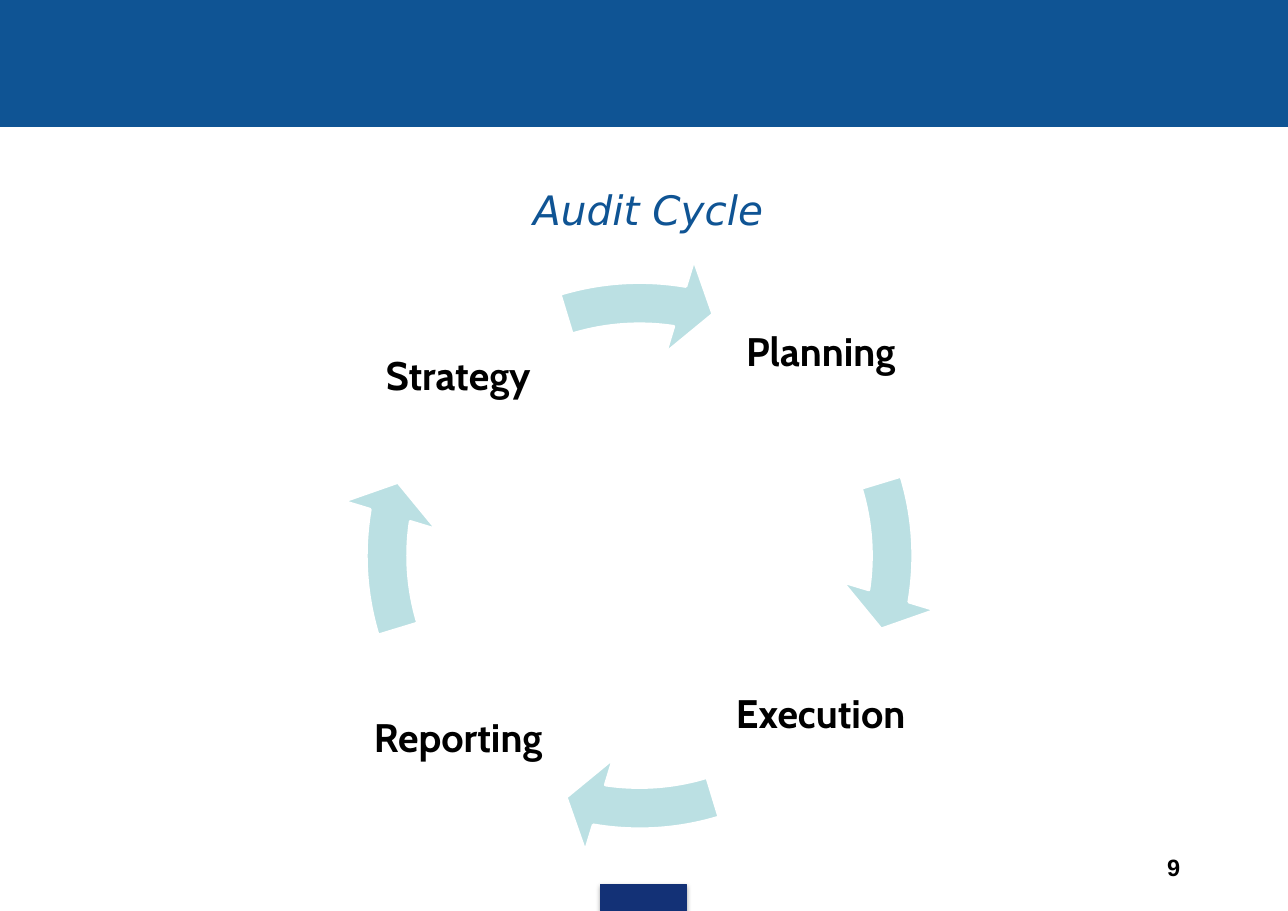
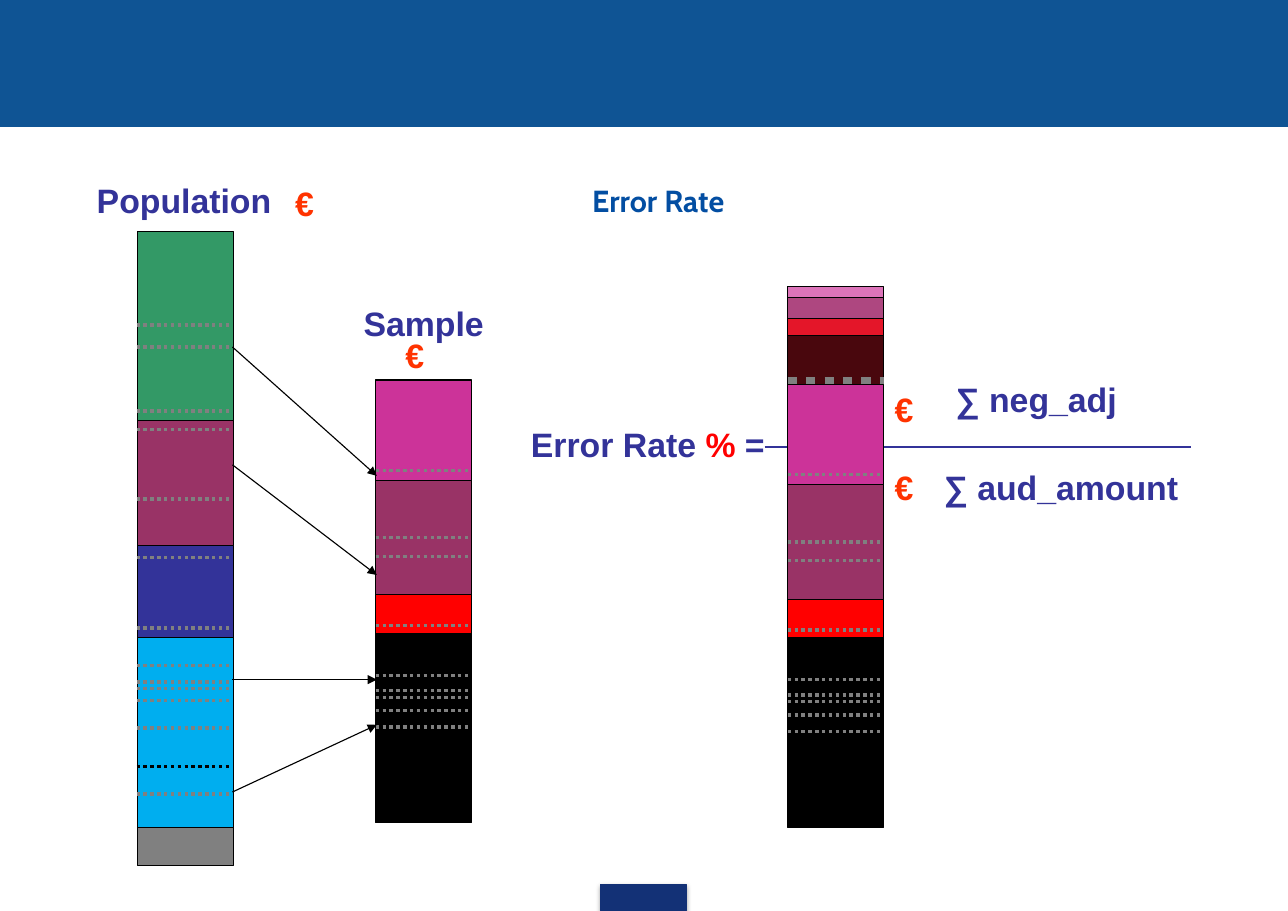
import pptx
import pptx.util
import pptx.dml.color
import pptx.enum.dml
import pptx.enum.shapes
import pptx.enum.text
import pptx.oxml
import pptx.oxml.ns

Inches = pptx.util.Inches
Pt = pptx.util.Pt
qn = pptx.oxml.ns.qn
SHAPE = pptx.enum.shapes.MSO_SHAPE
ANCHOR = pptx.enum.text.MSO_ANCHOR
ALIGN = pptx.enum.text.PP_ALIGN

WIDTH, HEIGHT = 11.69, 8.27
BAR_WIDTH = 0.87
COLORS = {
    "band": "0F5494", "tab": "133176", "title": "034EA2", "arrow": "BBE0E3",
    "white": "FFFFFF", "black": "000000", "gray": "808080", "label": "333399",
    "euro": "FF3300", "red": "FF0000", "pink": "CC3399", "plum": "993366",
    "green": "339966", "cyan": "00AEEF",
}
LABEL = dict(size=22.1, bold=True, color="label", inset=0)


def rgb(name):
    return pptx.dml.color.RGBColor.from_string(COLORS[name])


def drawing_xml(tag, attributes="", inner=""):
    namespace = pptx.oxml.ns.nsdecls("a")
    return pptx.oxml.parse_xml(f"<a:{tag} {namespace} {attributes}>{inner}</a:{tag}>")


# Elements
def add_text(page, at, text, font="Arial", size=20, color="black", bold=False,
             italic=False, align=ALIGN.CENTER, anchor=ANCHOR.MIDDLE, inset=0.05):
    """Add one paragraph; text is a string or a list of (text, colour) spans."""
    box = page.shapes.add_textbox(*map(Inches, at))
    frame = box.text_frame
    frame.word_wrap = True
    frame.vertical_anchor = anchor
    frame.margin_left = frame.margin_right = Inches(inset)
    frame.margin_top = frame.margin_bottom = Inches(inset)
    para = frame.paragraphs[0]
    para.alignment = align
    spans = [(text, color)] if isinstance(text, str) else text
    for words, span_color in spans:
        span = para.add_run()
        span.text = words
        span.font.name, span.font.size = font, Pt(size)
        span.font.bold, span.font.italic = bold, italic
        span.font.color.rgb = rgb(span_color)


def add_block(page, at, fill, line="black", width=0.75, kind=SHAPE.RECTANGLE, opacity=100):
    block = page.shapes.add_shape(kind, *map(Inches, at))
    block.shadow.inherit = False
    block.fill.solid()
    block.fill.fore_color.rgb = rgb(fill)
    if opacity < 100:
        color = block._element.spPr.find(qn("a:solidFill")).find(qn("a:srgbClr"))
        color.append(drawing_xml("alpha", f'val="{opacity * 1000}"'))
    block.line.color.rgb = rgb(line)
    block.line.width = Pt(width)
    return block


def add_line(page, start, end, color="black", width=0.75, dotted=False, arrow=False):
    line = page.shapes.add_connector(
        pptx.enum.shapes.MSO_CONNECTOR.STRAIGHT, *map(Inches, (*start, *end)))
    line.line.color.rgb = rgb(color)
    line.line.width = Pt(width)
    if dotted:
        line.line.dash_style = pptx.enum.dml.MSO_LINE.ROUND_DOT
    properties = line._element.spPr
    if arrow:
        properties.find(qn("a:ln")).append(drawing_xml("tailEnd", 'type="triangle"'))
    properties.append(drawing_xml("effectLst"))


def add_bar(page, left, edges, fills):
    """Stack one block between each pair of neighbouring edges."""
    for top, bottom, fill in zip(edges, edges[1:], fills):
        add_block(page, (left, top, BAR_WIDTH, bottom - top), fill)


def add_dots(page, left, heights, color="gray", width=2.25):
    for y in heights:
        add_line(page, (left, y), (left + BAR_WIDTH, y), color, width, dotted=True)


# Shared top band and bottom tab
def add_page(deck):
    page = deck.slides.add_slide(deck.slide_layouts[6])
    add_block(page, (0, 0, WIDTH, 1.15), "band", "band")
    tab = add_block(page, (5.45, 8.03, 0.78, 0.24), "tab", "tab")
    shadow = drawing_xml(
        "outerShdw", f'blurRad="{Pt(3.1)}" dist="{Pt(1.8)}" dir="5400000" rotWithShape="0"',
        '<a:srgbClr val="000000"><a:alpha val="35000"/></a:srgbClr>')
    tab._element.spPr.find(qn("a:effectLst")).append(shadow)
    return page


def build_audit_cycle(deck):
    page = add_page(deck)
    add_text(page, (8.24, 7.53, 2.57, 0.57), "9", size=15.4, bold=True,
             align=ALIGN.RIGHT, anchor=ANCHOR.BOTTOM, inset=0.1)
    add_text(page, (0.72, 1.65, 10.33, 0.5), "Audit Cycle", font="DejaVu Sans",
             size=26.5, color="band", italic=True)

    # Four stages, clockwise; the right-hand ones sit a little higher
    left, right, raised = 3.19, 6.48, 0.22
    stages = [("Planning", right, 2.43 - raised), ("Execution", right, 5.72 - raised),
              ("Reporting", left, 5.72), ("Strategy", left, 2.43)]
    for turn, (stage, x, y) in enumerate(stages):
        add_text(page, (x, y, 1.94, 1.94), stage, font="Cabin", size=26, bold=True)
        arrow = add_block(page, (3.07, 2.31, 5.47, 5.47), "arrow", "white", 2,
                          SHAPE.CIRCULAR_ARROW)
        # Angles are in units of 100000/60000 degree: 54 is a quarter, 216 a full turn
        angles = [(angle + 54 * turn) % 216 for angle in (5.495, 205.852)]
        for index, value in enumerate((0.069, 4.653, *angles, 0.081)):
            arrow.adjustments[index] = value


def build_error_rate(deck):
    page = add_page(deck)
    add_text(page, (1.24, 1.57, 9.47, 0.5), "Error Rate", font="Cabin", size=19.9,
             color="title", bold=True)

    # Population bar
    population_left = 1.25
    add_line(page, (population_left, 4.23), (population_left, 5.95), width=1.5)
    add_bar(page, population_left, [2.1, 3.82, 4.95, 5.79, 7.51, 7.86],
            ["green", "plum", "label", "cyan", "gray"])
    add_dots(page, population_left - 0.01,
             [2.95, 3.15, 3.73, 3.9, 4.53, 5.06, 5.7, 6.04, 6.19, 6.25, 6.36, 6.61, 7.21])
    add_dots(page, population_left - 0.01, [6.96], "black")

    # Fraction line, which runs behind the error bar
    add_line(page, (6.94, 4.06), (10.81, 4.06), "label", 1.5)

    # Translucent errors on top of the second sample bar
    error_left, lift = 7.15, 0.04
    sample_edges = [3.45, 4.36, 5.4, 5.75, 7.47]
    error_bottom = sample_edges[0] + lift
    for top, fill in zip((2.6, 2.7, 2.89, 3.05), ("pink", "plum", "red", "black")):
        add_block(page, (error_left, top, BAR_WIDTH, error_bottom - top), fill, opacity=68)
    add_dots(page, error_left, [3.46], width=6)

    # Sample bar, shown twice
    sample_left = 3.41
    sample_dots = [4.27, 4.88, 5.05, 5.68, 6.13, 6.27, 6.33, 6.45, 6.6]
    for left, shift in ((sample_left, 0), (error_left, lift)):
        add_bar(page, left, [edge + shift for edge in sample_edges],
                ["pink", "plum", "red", "black"])
        add_dots(page, left, [y + shift for y in sample_dots])

    # Arrows from population to sample
    for start, end in ((3.15, 4.32), (4.22, 5.22), (6.17, 6.17), (7.19, 6.58)):
        add_line(page, (2.11, start), (3.42, end), arrow=True)

    # Labels and formula
    labels = [
        ((0.63, 1.67, 2.08, 0.3), "Population"),
        ((3.17, 2.78, 1.35, 0.3), "Sample"),
        ((4.78, 3.88, 2.2, 0.3), [("Error Rate ", "label"), ("%", "red"), (" =", "label")]),
        ((8.45, 3.47, 1.91, 0.3), "∑ neg_adj"),
        ((8.45, 4.27, 2.36, 0.3), "∑ aud_amount"),
    ]
    for at, text in labels:
        add_text(page, at, text, **LABEL)
    for x, y in ((2.55, 1.69), (3.55, 3.07), (7.99, 3.56), (7.99, 4.27)):
        add_text(page, (x, y, 0.43, 0.3), "€", **{**LABEL, "color": "euro"})


def main():
    deck = pptx.Presentation()
    deck.slide_width, deck.slide_height = Inches(WIDTH), Inches(HEIGHT)
    build_audit_cycle(deck)
    build_error_rate(deck)
    deck.save("out.pptx")


if __name__ == "__main__":
    main()
